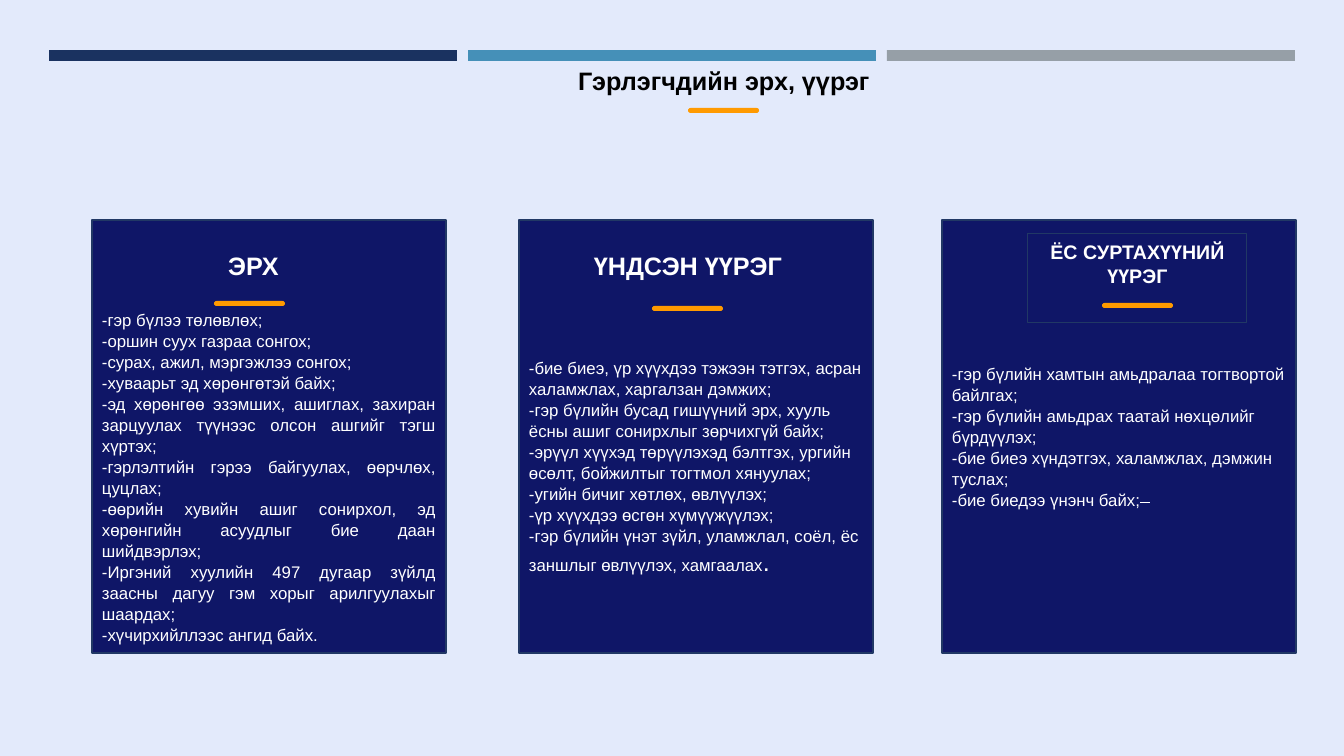
import pptx
import pptx.dml.color
import pptx.enum.shapes
import pptx.enum.text
import pptx.util

EMU_PER_PX = 914400 / 100.8
COLORS = {
    "background": "E3EAFB",
    "navy": "1A3260",
    "blue": "4590B8",
    "gray": "969FA7",
    "card": "0F1667",
    "border": "213865",
    "accent": "FF9A00",
    "white": "FFFFFF",
    "black": "000000",
}
SHAPES = pptx.enum.shapes.MSO_SHAPE
ALIGN = pptx.enum.text.PP_ALIGN
ANCHOR = pptx.enum.text.MSO_ANCHOR

RIGHTS = [
    "-гэр бүлээ төлөвлөх;",
    "-оршин суух газраа сонгох;",
    "-сурах, ажил, мэргэжлээ сонгох;",
    "-хуваарьт эд хөрөнгөтэй байх;",
    "-эд хөрөнгөө эзэмших, ашиглах, захиран зарцуулах түүнээс олсон ашгийг тэгш хүртэх;",
    "-гэрлэлтийн гэрээ байгуулах, өөрчлөх, цуцлах;",
    "-өөрийн хувийн ашиг сонирхол, эд хөрөнгийн асуудлыг бие даан шийдвэрлэх;",
    "-Иргэний хуулийн 497 дугаар зүйлд заасны дагуу гэм хорыг арилгуулахыг шаардах;",
    "-хүчирхийллээс ангид байх.",
]
MAIN_DUTIES = [
    "-бие биеэ, үр хүүхдээ тэжээн тэтгэх, асран халамжлах, харгалзан дэмжих;",
    "-гэр бүлийн бусад гишүүний эрх, хууль ёсны ашиг сонирхлыг зөрчихгүй байх;",
    "-эрүүл хүүхэд төрүүлэхэд бэлтгэх, ургийн өсөлт, бойжилтыг тогтмол хянуулах;",
    "-угийн бичиг хөтлөх, өвлүүлэх;",
    "-үр хүүхдээ өсгөн хүмүүжүүлэх;",
    "-гэр бүлийн үнэт зүйл, уламжлал, соёл, ёс заншлыг өвлүүлэх, хамгаалах",
]
MORAL_DUTIES = [
    "-гэр бүлийн хамтын амьдралаа тогтвортой байлгах;",
    "-гэр бүлийн амьдрах таатай нөхцөлийг бүрдүүлэх;",
    "-бие биеэ хүндэтгэх, халамжлах, дэмжин туслах;",
    "-бие биедээ үнэнч байх;",
]


def px(length):
    return pptx.util.Emu(round(length * EMU_PER_PX))


def rgb(name):
    return pptx.dml.color.RGBColor.from_string(COLORS[name])


def add_run(paragraph, text, size=12, color="white", bold=False):
    run = paragraph.add_run()
    run.text = text
    run.font.name = "Arial"
    run.font.size = pptx.util.Pt(size)
    run.font.bold = bold
    run.font.color.rgb = rgb(color)
    return run


def write(shape, lines, align=ALIGN.LEFT, anchor=ANCHOR.TOP, top=5, **font):
    frame = shape.text_frame
    frame.word_wrap = True
    frame.vertical_anchor = anchor
    frame.margin_left = frame.margin_right = px(10)
    frame.margin_top, frame.margin_bottom = px(top), px(5)
    for index, line in enumerate(lines):
        paragraph = frame.paragraphs[0] if index == 0 else frame.add_paragraph()
        paragraph.alignment = align
        paragraph.line_spacing = 1.04
        add_run(paragraph, line, **font)
    return frame.paragraphs[-1]


def add_block(slide, left, top, width, height, fill=None, line=None,
              line_width=1, kind=SHAPES.RECTANGLE):
    block = slide.shapes.add_shape(kind, px(left), px(top), px(width), px(height))
    block.shadow.inherit = False
    if fill:
        block.fill.solid()
        block.fill.fore_color.rgb = rgb(fill)
    else:
        block.fill.background()
    if line:
        block.line.color.rgb = rgb(line)
        block.line.width = pptx.util.Pt(line_width)
    else:
        block.line.fill.background()
    return block


def add_card(slide, left, lines, **layout):
    card = add_block(slide, left, 220, 354, 433, "card", "border", 1.75)
    return write(card, lines, anchor=ANCHOR.MIDDLE, **layout)


def add_heading(slide, left, top, width, text, **layout):
    heading = slide.shapes.add_textbox(px(left), px(top), px(width), px(40))
    write(heading, [text], size=18, bold=True, **layout)


def add_accent(slide, left, top):
    accent = add_block(slide, left, top, 71, 5, "accent", kind=SHAPES.ROUNDED_RECTANGLE)
    accent.adjustments[0] = 0.5


def main():
    deck = pptx.Presentation()
    deck.slide_width, deck.slide_height = px(1344), px(756)
    slide = deck.slides.add_slide(deck.slide_layouts[6])
    slide.background.fill.solid()
    slide.background.fill.fore_color.rgb = rgb("background")

    for index, color in enumerate(("navy", "blue", "gray")):
        add_block(slide, 49 + 419 * index, 50, 408, 11, color)

    add_card(slide, 92, RIGHTS, align=ALIGN.JUSTIFY, top=86)
    last_duty = add_card(slide, 519, MAIN_DUTIES, top=66)
    add_run(last_duty, ".", size=18)
    last_moral = add_card(slide, 942, MORAL_DUTIES)
    struck_gap = add_run(last_moral, "  ")
    struck_gap.font._element.set("strike", "sngStrike")

    add_heading(slide, 568, 59, 323, "Гэрлэгчдийн эрх, үүрэг", color="black")
    add_heading(slide, 211, 244, 85, "ЭРХ", align=ALIGN.CENTER)
    add_heading(slide, 581, 244, 214, "ҮНДСЭН ҮҮРЭГ", align=ALIGN.CENTER)
    moral_heading = add_block(slide, 1028, 234, 219, 89, line="border", line_width=0.75)
    write(moral_heading, ["ЁС СУРТАХҮҮНИЙ ҮҮРЭГ"], align=ALIGN.CENTER, size=14, bold=True)

    for left, top in ((688, 108), (214, 301), (652, 306), (1102, 303)):
        add_accent(slide, left, top)

    deck.save("out.pptx")


if __name__ == "__main__":
    main()
